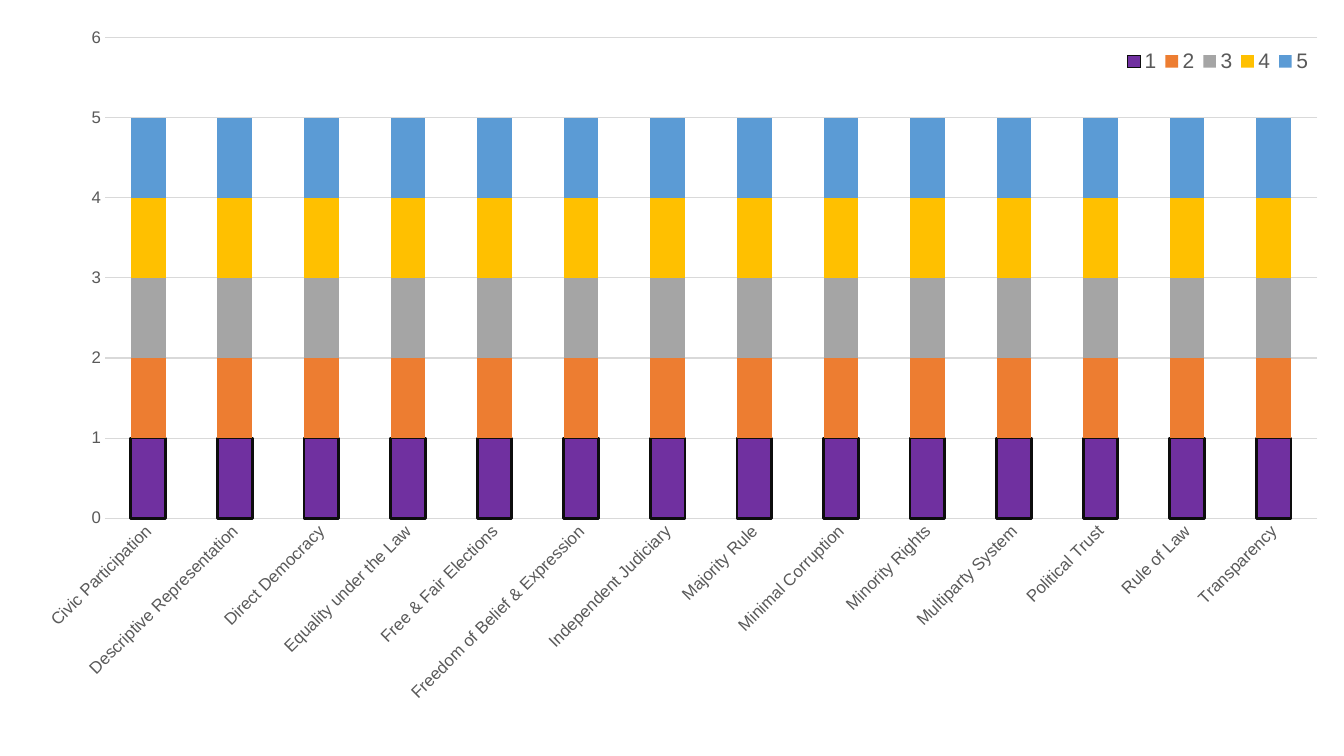
from dataclasses import dataclass

from lxml import etree
from pptx import Presentation
from pptx import util as u
from pptx.chart import axis as chart_axis
from pptx.chart import chart as chart_module
from pptx.chart import data as chart_data
from pptx.dml.color import RGBColor
from pptx.enum import chart as chart_enum
from pptx.oxml import ns
from pptx.text import text as chart_text

FONT = "Arial"
BLACK = RGBColor(0x00, 0x00, 0x00)
OUTLINE = RGBColor(0x0D, 0x0D, 0x0D)
LABEL_GREY = RGBColor(0x59, 0x59, 0x59)
LINE_GREY = RGBColor(0xD9, 0xD9, 0xD9)
PURPLE = RGBColor(0x70, 0x30, 0xA0)
ORANGE = RGBColor(0xED, 0x7D, 0x31)
GREY = RGBColor(0xA5, 0xA5, 0xA5)
YELLOW = RGBColor(0xFF, 0xC0, 0x00)
BLUE = RGBColor(0x5B, 0x9B, 0xD5)

PRINCIPLES = [
    "Civic Participation",
    "Descriptive Representation",
    "Direct Democracy",
    "Equality under the Law",
    "Free & Fair Elections",
    "Freedom of Belief & Expression",
    "Independent Judiciary",
    "Majority Rule",
    "Minimal Corruption",
    "Minority Rights",
    "Multiparty System",
    "Political Trust",
    "Rule of Law",
    "Transparency",
]


@dataclass(frozen=True)
class Level:
    name: str
    color: RGBColor
    outlined: bool = False


@dataclass(frozen=True)
class Area:
    """A place in the chart, as fractions of its width and height."""

    x: float
    y: float
    w: float
    h: float


LEVELS = [
    Level("1", PURPLE, outlined=True),
    Level("2", ORANGE),
    Level("3", GREY),
    Level("4", YELLOW),
    Level("5", BLUE),
]
PLOT_AREA = Area(0.064, 0.033, 0.916, 0.647)
LEGEND_AREA = Area(0.83, 0.04, 0.15, 0.05)


def format_font(font: chart_text.Font, size: float, color: RGBColor) -> None:
    font.name = FONT
    font.size = u.Pt(size)
    font.color.rgb = color


def place(element: etree.ElementBase, area: Area, index: int, inner: bool = False) -> None:
    """Give a chart part a manual layout, inserted as the child at index."""
    for old_layout in element.findall(ns.qn("c:layout")):
        element.remove(old_layout)
    layout = etree.Element(ns.qn("c:layout"))
    manual = etree.SubElement(layout, ns.qn("c:manualLayout"))
    settings = [("layoutTarget", "inner")] if inner else []
    settings += [("xMode", "edge"), ("yMode", "edge")]
    settings += [(side, str(getattr(area, side))) for side in ("x", "y", "w", "h")]
    for tag, value in settings:
        etree.SubElement(manual, ns.qn(f"c:{tag}"), val=value)
    element.insert(index, layout)


def format_axis(axis: chart_axis._BaseAxis) -> None:
    axis.major_tick_mark = chart_enum.XL_TICK_MARK.NONE
    axis.minor_tick_mark = chart_enum.XL_TICK_MARK.NONE
    format_font(axis.tick_labels.font, 12, LABEL_GREY)


def format_axes(chart: chart_module.Chart) -> None:
    categories, values = chart.category_axis, chart.value_axis
    format_axis(categories)
    format_axis(values)
    categories.has_major_gridlines = False
    values.has_major_gridlines = True
    for line in (categories.format.line, values.major_gridlines.format.line):
        line.color.rgb = LINE_GREY
        line.width = u.Pt(0.75)
    values.format.line.fill.background()
    values.minimum_scale, values.maximum_scale, values.major_unit = 0, 6, 1
    label_body = categories._element.find(ns.qn("c:txPr")).find(ns.qn("a:bodyPr"))
    label_body.set("rot", "-2700000")
    label_body.set("vert", "horz")


def format_columns(chart: chart_module.Chart) -> None:
    plot = chart.plots[0]
    plot.gap_width = 150
    plot.overlap = 100
    plot.vary_by_categories = False
    for series, level in zip(plot.series, LEVELS):
        series.format.fill.solid()
        series.format.fill.fore_color.rgb = level.color
        if level.outlined:
            series.format.line.color.rgb = OUTLINE
            series.format.line.width = u.Pt(2)
        else:
            series.format.line.fill.background()


def format_legend(chart: chart_module.Chart) -> None:
    chart.has_legend = True
    legend = chart.legend
    legend.position = chart_enum.XL_LEGEND_POSITION.BOTTOM
    legend.include_in_layout = False
    format_font(legend.font, 15, LABEL_GREY)
    place(legend._element, LEGEND_AREA, index=1)


def main() -> None:
    presentation = Presentation()
    presentation.slide_width = u.Cm(33.87)
    presentation.slide_height = u.Cm(19.05)
    slide = presentation.slides.add_slide(presentation.slide_layouts[6])

    data = chart_data.CategoryChartData()
    data.categories = PRINCIPLES
    for level in LEVELS:
        data.add_series(level.name, [1] * len(PRINCIPLES))
    chart = slide.shapes.add_chart(
        chart_enum.XL_CHART_TYPE.COLUMN_STACKED,
        u.Cm(0.51), u.Cm(0.33), u.Cm(33.35), u.Cm(18.72), data,
    ).chart
    chart.has_title = False
    format_font(chart.font, 10, BLACK)
    format_axes(chart)
    format_columns(chart)
    format_legend(chart)
    plot_area = chart._chartSpace.chart.plotArea
    place(plot_area, PLOT_AREA, index=0, inner=True)

    presentation.save("out.pptx")


if __name__ == "__main__":
    main()
